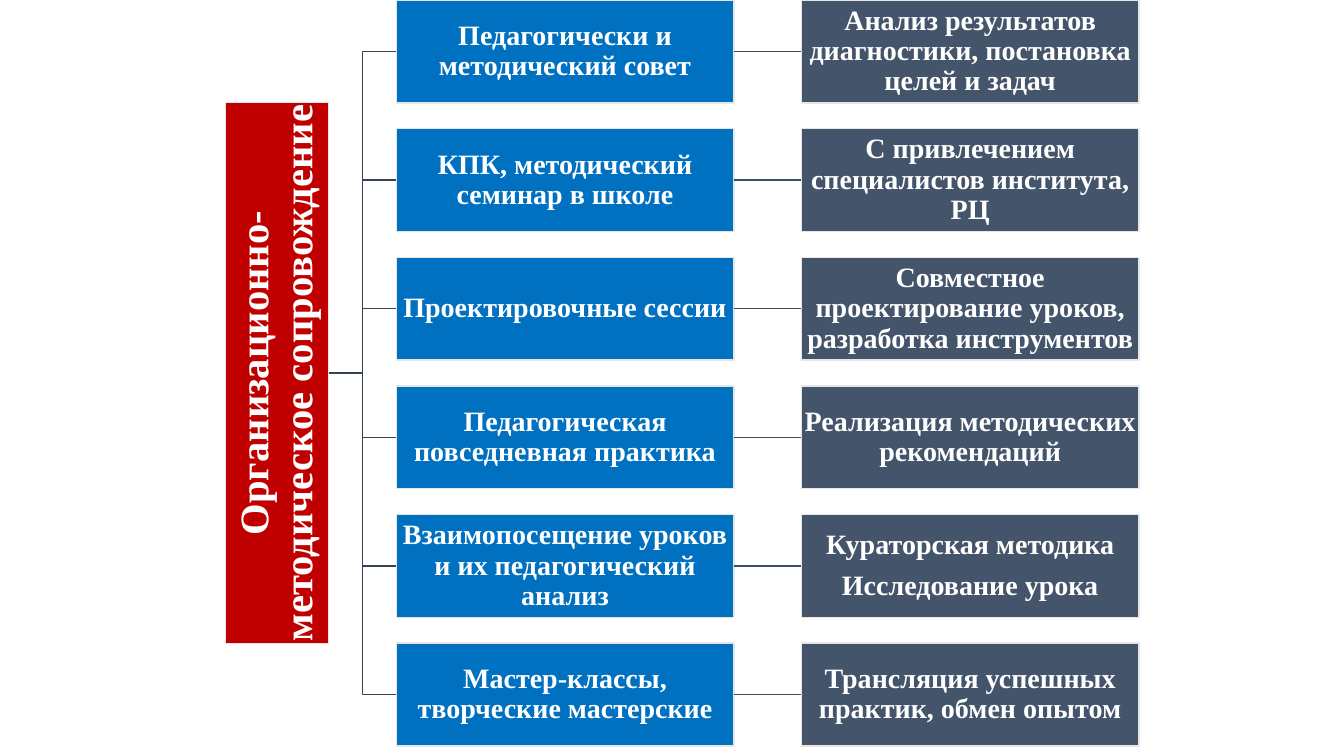
from pptx import Presentation
from pptx.dml.color import RGBColor
from pptx.enum.shapes import MSO_CONNECTOR, MSO_SHAPE
from pptx.enum.text import MSO_ANCHOR, PP_ALIGN
from pptx.oxml.ns import qn
from pptx.util import Pt
from lxml import etree

RECT = MSO_SHAPE.RECTANGLE
STRAIGHT, ELBOW = MSO_CONNECTOR.STRAIGHT, MSO_CONNECTOR.ELBOW
MIDDLE, CENTER = MSO_ANCHOR.MIDDLE, PP_ALIGN.CENTER

ROOT = ["Организационно-методическое сопровождение"]
# Each row: form of work, then the paragraphs describing its content
ROWS = [
    ("Педагогически и методический совет",
     ["Анализ результатов диагностики, постановка целей и задач"]),
    ("КПК, методический семинар в школе",
     ["С привлечением специалистов института, РЦ"]),
    ("Проектировочные сессии",
     ["Совместное проектирование уроков, разработка инструментов"]),
    ("Педагогическая повседневная практика",
     ["Реализация методических рекомендаций"]),
    ("Взаимопосещение уроков и их педагогический анализ",
     ["Кураторская методика", "Исследование урока"]),
    ("Мастер-классы, творческие мастерские",
     ["Трансляция успешных практик, обмен опытом"]),
]
COLORS = {
    "root": "C00000", "form": "0070C0", "content": "44546A",
    "border": "E7E6E6", "text": "FFFFFF",
    "branch": "364355", "link": "3E4C60",
}
FONT = "Times New Roman"

BOX_W, BOX_H = 241.2, 73.5
PITCH = 91.88
COL_GAP = 48.2
FORM_X = 283
CONTENT_X = FORM_X + BOX_W + COL_GAP
ROOT_LEN = 386.6
ROOT_RIGHT = FORM_X - COL_GAP
ROOT_CX = ROOT_RIGHT - BOX_H / 2
ROOT_CY = ((len(ROWS) - 1) * PITCH + BOX_H) / 2


def add_box(slide, x, y, w, color, paragraphs, size, inset):
    s = slide.shapes.add_shape(RECT, Pt(x), Pt(y), Pt(w), Pt(BOX_H))
    s.shadow.inherit = False
    s.fill.solid()
    s.fill.fore_color.rgb = RGBColor.from_string(COLORS[color])
    s.line.color.rgb = RGBColor.from_string(COLORS["border"])
    s.line.width = Pt(1)
    tf = s.text_frame
    tf.word_wrap = True
    tf.vertical_anchor = MIDDLE
    tf.margin_left = tf.margin_right = Pt(inset)
    tf.margin_top = tf.margin_bottom = Pt(inset)
    for i, text in enumerate(paragraphs):
        p = tf.paragraphs[0] if i == 0 else tf.add_paragraph()
        p.alignment = CENTER
        p.line_spacing = 0.9
        p.space_after = Pt(round(size * 0.4))
        r = p.add_run()
        r.text = text
        r.font.name = FONT
        r.font.size = Pt(size)
        r.font.bold = True
        r.font.color.rgb = RGBColor.from_string(COLORS["text"])
    return s


def add_line(slide, kind, x1, y1, x2, y2, color):
    c = slide.shapes.add_connector(kind, Pt(x1), Pt(y1), Pt(x2), Pt(y2))
    c.line.color.rgb = RGBColor.from_string(COLORS[color])
    c.line.width = Pt(1)
    etree.SubElement(c._element.spPr, qn("a:effectLst"))
    return c


def main():
    prs = Presentation()
    prs.slide_width, prs.slide_height = Pt(960), Pt(540)
    slide = prs.slides.add_slide(prs.slide_layouts[6])

    for i, (form, content) in enumerate(ROWS):
        y = i * PITCH
        cy = y + BOX_H / 2
        add_line(slide, ELBOW, ROOT_RIGHT, ROOT_CY, FORM_X, cy, "branch")
        form_box = add_box(slide, FORM_X, y, BOX_W, "form", [form], 20, 1)
        content_box = add_box(slide, CONTENT_X, y, BOX_W, "content", content, 20, 1)
        link = add_line(slide, STRAIGHT, FORM_X + BOX_W, cy, CONTENT_X, cy, "link")
        link.begin_connect(form_box, 3)
        link.end_connect(content_box, 1)

    root = add_box(slide, ROOT_CX - ROOT_LEN / 2, ROOT_CY - BOX_H / 2,
                   ROOT_LEN, "root", ROOT, 29, 1.5)
    root.rotation = 270
    prs.save("out.pptx")


if __name__ == "__main__":
    main()
